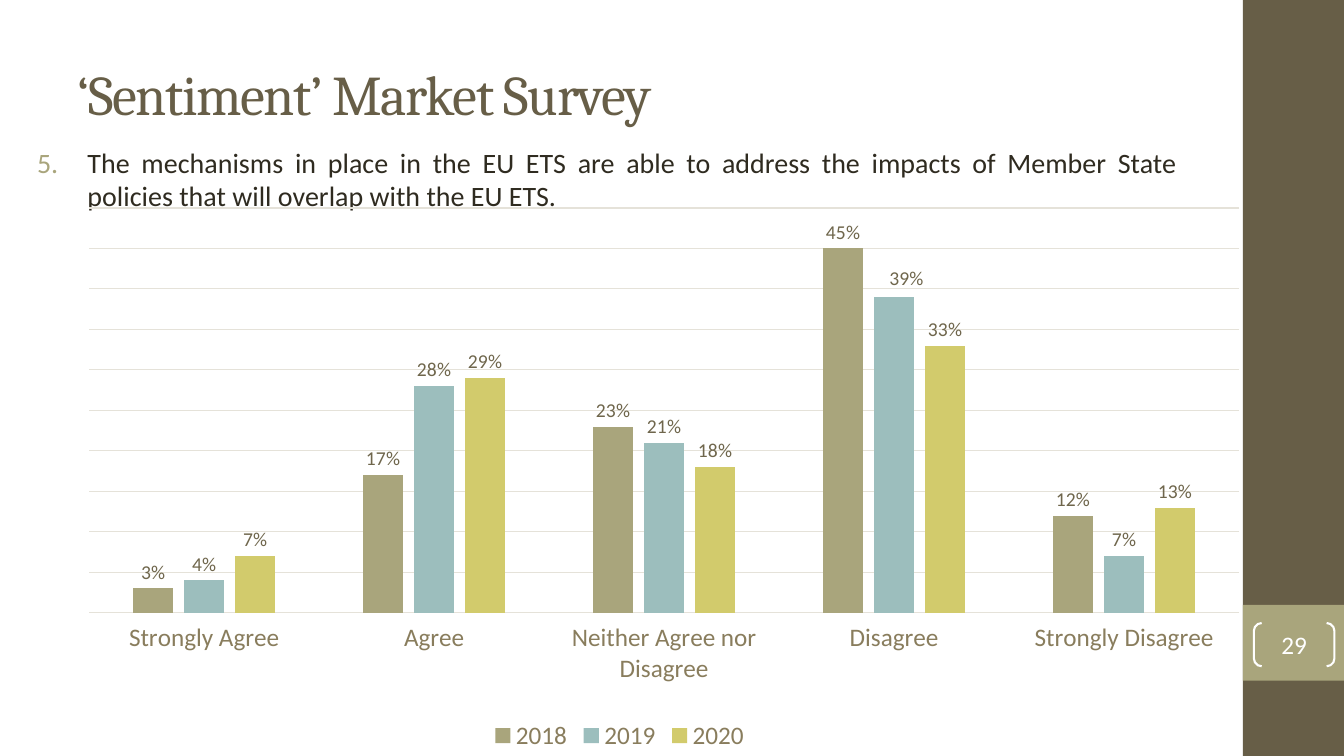
from dataclasses import dataclass

from lxml.etree import SubElement
from pptx import Presentation
from pptx.chart.data import CategoryChartData
from pptx.dml.color import RGBColor
from pptx.enum.chart import XL_LABEL_POSITION, XL_LEGEND_POSITION, XL_TICK_LABEL_POSITION, XL_TICK_MARK
from pptx.enum.shapes import MSO_SHAPE
from pptx.enum.text import MSO_ANCHOR, MSO_AUTO_SIZE, PP_ALIGN
from pptx.oxml import parse_xml
from pptx.oxml.ns import nsdecls, qn
from pptx.util import Cm, Pt

BROWN, OLIVE, WHITE = "675E47", "A9A57C", "FFFFFF"
INK, AXIS_TEXT, LABEL_TEXT, GRID = "2F2B20", "897D5D", "6F664C", "E5E2D9"
PERCENT = "0%"


@dataclass(frozen=True)
class Box:
    left: float
    top: float
    width: float
    height: float

    def emu(self) -> tuple:
        return Cm(self.left), Cm(self.top), Cm(self.width), Cm(self.height)


@dataclass(frozen=True)
class Band:
    box: Box
    color: str


@dataclass(frozen=True)
class SurveyYear:
    name: str
    shares: tuple
    color: str


BANDS = (
    Band(Box(31.32, 0, 2.55, 19.05), BROWN),
    Band(Box(31.32, 15.24, 2.55, 1.91), OLIVE),
)
ANSWERS = ("Strongly Agree", "Agree", "Neither Agree nor Disagree", "Disagree", "Strongly Disagree")
YEARS = (
    SurveyYear("2018", (0.03, 0.17, 0.23, 0.45, 0.12), OLIVE),
    SurveyYear("2019", (0.04, 0.28, 0.21, 0.39, 0.07), "9CBEBD"),
    SurveyYear("2020", (0.07, 0.29, 0.18, 0.33, 0.13), "D2CB6C"),
)


def rgb(color: str) -> RGBColor:
    return RGBColor.from_string(color)


def set_font(font, size: float, color: str, name: str = "Calibri") -> None:
    font.size, font.name, font.color.rgb = Pt(size), name, rgb(color)


def set_line(line, color: str, width: float) -> None:
    line.color.rgb, line.width = rgb(color), Pt(width)


def place(shape, box: Box) -> None:
    shape.left, shape.top, shape.width, shape.height = box.emu()


def add_band(slide, band: Band) -> None:
    shape = slide.shapes.add_shape(MSO_SHAPE.RECTANGLE, *band.box.emu())
    shape.shadow.inherit = False
    shape.fill.solid()
    shape.fill.fore_color.rgb = rgb(band.color)
    shape.line.fill.background()


def add_page_number(slide, box: Box, number: str) -> None:
    bracket = slide.shapes.add_shape(MSO_SHAPE.DOUBLE_BRACKET, *box.emu())
    bracket.adjustments[0] = 0.18
    bracket.shadow.inherit = False
    bracket.fill.background()
    set_line(bracket.line, WHITE, 1.5)
    frame = bracket.text_frame
    frame.margin_left = frame.margin_right = frame.margin_top = frame.margin_bottom = 0
    frame.vertical_anchor = MSO_ANCHOR.MIDDLE
    frame.text = number
    frame.paragraphs[0].alignment = PP_ALIGN.CENTER
    set_font(frame.paragraphs[0].font, 18, WHITE)


def fill_title(title, box: Box, text: str) -> None:
    place(title, box)
    frame = title.text_frame
    frame.text = text
    frame.auto_size = MSO_AUTO_SIZE.NONE
    frame.vertical_anchor = MSO_ANCHOR.MIDDLE
    heading = frame.paragraphs[0]
    heading.alignment = PP_ALIGN.LEFT
    set_font(heading.font, 40, BROWN, "Cambria")
    heading.runs[0].font._element.set("spc", "-100")


def fill_statement(body, box: Box, text: str, number: int) -> None:
    place(body, box)
    frame = body.text_frame
    frame.text = text
    frame.auto_size = MSO_AUTO_SIZE.NONE
    statement = frame.paragraphs[0]
    statement.alignment = PP_ALIGN.JUSTIFY
    set_font(statement.font, 20, INK)
    properties = statement._p.get_or_add_pPr()
    properties.set("marL", str(Cm(1.57)))
    properties.set("indent", str(Cm(-1.27)))
    bullet_color = parse_xml(f'<a:buClr {nsdecls("a")}><a:srgbClr val="{OLIVE}"/></a:buClr>')
    numbering = parse_xml(f'<a:buAutoNum {nsdecls("a")} type="arabicPeriod" startAt="{number}"/>')
    for position, element in enumerate((bullet_color, numbering)):
        properties.insert(position, element)


def set_layout(parent, position: int, settings: dict) -> None:
    for previous in parent.findall(qn("c:layout")):
        parent.remove(previous)
    layout = parse_xml(f'<c:layout {nsdecls("c")}><c:manualLayout/></c:layout>')
    for tag, value in settings.items():
        SubElement(layout[0], qn(f"c:{tag}")).set("val", str(value))
    parent.insert(position, layout)


def add_survey_chart(slide, box: Box) -> None:
    data = CategoryChartData(number_format=PERCENT)
    data.categories = ANSWERS
    for year in YEARS:
        data.add_series(year.name, year.shares)
    chart = slide.shapes.add_chart(XL_CHART_TYPE.COLUMN_CLUSTERED, *box.emu(), data).chart
    set_font(chart.font, 10, INK)
    chart.has_title = False
    chart.has_legend = True
    chart.legend.position = XL_LEGEND_POSITION.BOTTOM
    chart.legend.include_in_layout = False
    set_font(chart.legend.font, 18, AXIS_TEXT)

    answers = chart.category_axis
    answers.major_tick_mark = XL_TICK_MARK.NONE
    answers.tick_label_position = XL_TICK_LABEL_POSITION.LOW
    set_font(answers.tick_labels.font, 18, AXIS_TEXT)
    set_line(answers.format.line, GRID, 0.75)
    shares = chart.value_axis
    shares.minimum_scale, shares.maximum_scale, shares.major_unit = 0, 0.5, 0.05
    shares.visible = False
    set_line(shares.major_gridlines.format.line, GRID, 0.75)

    plot = chart.plots[0]
    plot.gap_width, plot.overlap, plot.vary_by_categories = 219, -27, False
    for year, series in zip(YEARS, plot.series):
        series.format.fill.solid()
        series.format.fill.fore_color.rgb = rgb(year.color)
        labels = series.data_labels
        labels.show_value = True
        labels.number_format, labels.number_format_is_linked = PERCENT, False
        labels.position = XL_LABEL_POSITION.OUTSIDE_END
        set_font(labels.font, 14, LABEL_TEXT)

    disagree_2019 = plot.series[1].points[3].data_label
    set_font(disagree_2019.font, 14, LABEL_TEXT)
    disagree_2019.position = XL_LABEL_POSITION.OUTSIDE_END
    set_layout(chart.element.xpath(".//c:dLbl")[0], 1, {"x": 0.01, "y": -0.005})
    set_layout(chart.element.xpath(".//c:plotArea")[0], 0, {
        "layoutTarget": "inner", "xMode": "edge", "yMode": "edge",
        "x": 0.072, "y": 0.031, "w": 0.928, "h": 0.716})


def main() -> None:
    deck = Presentation()
    deck.slide_width, deck.slide_height = Cm(33.87), Cm(19.05)
    slide = deck.slides.add_slide(deck.slide_layouts[1])
    for band in BANDS:
        add_band(slide, band)
    fill_title(slide.shapes.title, Box(1.7, 0.76, 28.22, 3.18), "‘Sentiment’ Market Survey")
    add_page_number(slide, Box(31.6, 15.7, 2.03, 1.09), "29")
    fill_statement(
        slide.placeholders[1], Box(0.38, 3.53, 29.54, 0.81),
        "The mechanisms in place in the EU ETS are able to address the impacts of "
        "Member State policies that will overlap with the EU ETS.", 5)
    add_survey_chart(slide, Box(0, 4.8, 31.24, 14.25))
    deck.save("out.pptx")


from pptx.enum.chart import XL_CHART_TYPE

if __name__ == "__main__":
    main()
